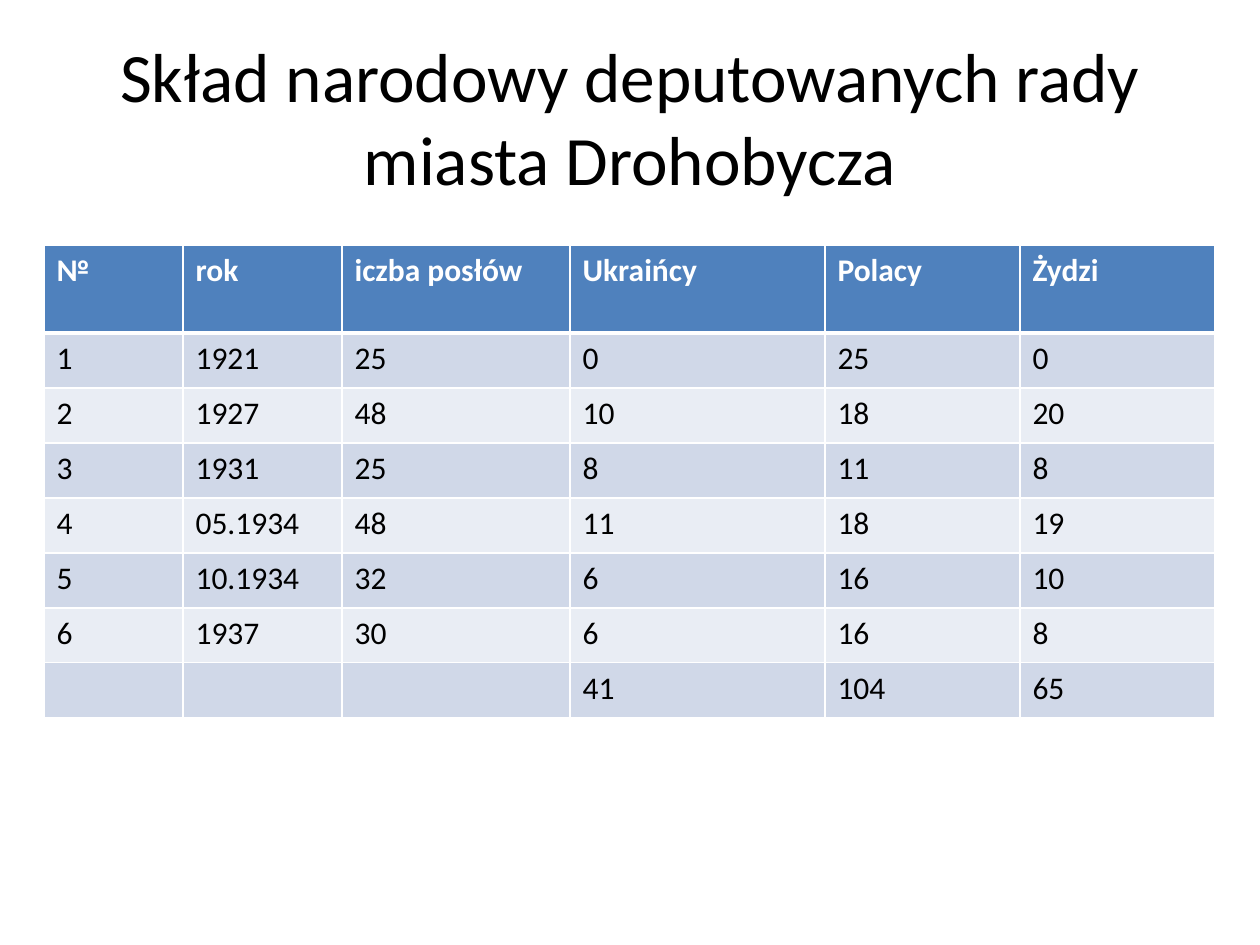
"""Build the slide on the national make-up of the Drohobycz town council."""
import pptx
import pptx.dml.color
import pptx.enum.text
import pptx.oxml
import pptx.oxml.ns
import pptx.util

RGBColor = pptx.dml.color.RGBColor
BLACK = RGBColor(0x00, 0x00, 0x00)
WHITE = RGBColor(0xFF, 0xFF, 0xFF)
HEADER_BLUE = RGBColor(0x4F, 0x81, 0xBD)
BANDS = [RGBColor(0xE9, 0xED, 0xF4), RGBColor(0xD0, 0xD8, 0xE8)]

FONT = "Calibri"
TITLE = "Skład narodowy deputowanych rady miasta Drohobycza"
ROWS = [
    ("№", "rok", "iczba posłów", "Ukraińcy", "Polacy", "Żydzi"),
    ("1", "1921", "25", "0", "25", "0"),
    ("2", "1927", "48", "10", "18", "20"),
    ("3", "1931", "25", "8", "11", "8"),
    ("4", "05.1934", "48", "11", "18", "19"),
    ("5", "10.1934", "32", "6", "16", "10"),
    ("6", "1937", "30", "6", "16", "8"),
    ("", "", "", "41", "104", "65"),
]

PAGE_SIZE = (1260, 945)
TITLE_BOX = (63, 38, 1134, 157)
TABLE_LEFT, TABLE_TOP = 44, 245
COLUMN_WIDTHS = [139, 159, 228, 255, 195, 195]
ROW_HEIGHTS = [88] + [55] * (len(ROWS) - 1)


def px(length):
    return pptx.util.Emu(length * 914400 // 126)


def style_paragraph(para, size, color, bold=False):
    para.font.name = FONT
    para.font.size = pptx.util.Pt(size)
    para.font.bold = bold
    para.font.color.rgb = color


def add_title(page):
    box = page.shapes.add_textbox(*map(px, TITLE_BOX))
    frame = box.text_frame
    frame.word_wrap = True
    frame.vertical_anchor = pptx.enum.text.MSO_ANCHOR.MIDDLE
    para = frame.paragraphs[0]
    para.text = TITLE
    para.alignment = pptx.enum.text.PP_ALIGN.CENTER
    style_paragraph(para, 39.6, BLACK)


def add_borders(cell, widths):
    properties = cell._tc.get_or_add_tcPr()
    for side, width in widths.items():
        properties.append(pptx.oxml.parse_xml(
            f'<a:ln{side} {pptx.oxml.ns.nsdecls("a")} w="{pptx.util.Pt(width)}">'
            f'<a:solidFill><a:srgbClr val="{WHITE}"/></a:solidFill></a:ln{side}>'))


def add_council_table(page):
    table = page.shapes.add_table(
        len(ROWS), len(COLUMN_WIDTHS), px(TABLE_LEFT), px(TABLE_TOP),
        px(sum(COLUMN_WIDTHS)), px(sum(ROW_HEIGHTS))).table
    for column, width in zip(table.columns, COLUMN_WIDTHS):
        column.width = px(width)
    for index, (row, height, values) in enumerate(zip(table.rows, ROW_HEIGHTS, ROWS)):
        row.height = px(height)
        header = index == 0
        borders = {"L": 1, "R": 1, "T": 3 if index == 1 else 1, "B": 3 if header else 1}
        for cell, value in zip(row.cells, values):
            cell.text = value
            style_paragraph(cell.text_frame.paragraphs[0], 18,
                            WHITE if header else BLACK, header)
            add_borders(cell, borders)
            cell.fill.solid()
            cell.fill.fore_color.rgb = HEADER_BLUE if header else BANDS[index % 2]


def main():
    deck = pptx.Presentation()
    deck.slide_width, deck.slide_height = map(px, PAGE_SIZE)
    page = deck.slides.add_slide(deck.slide_layouts[6])
    add_title(page)
    add_council_table(page)
    deck.save("out.pptx")


if __name__ == "__main__":
    main()
